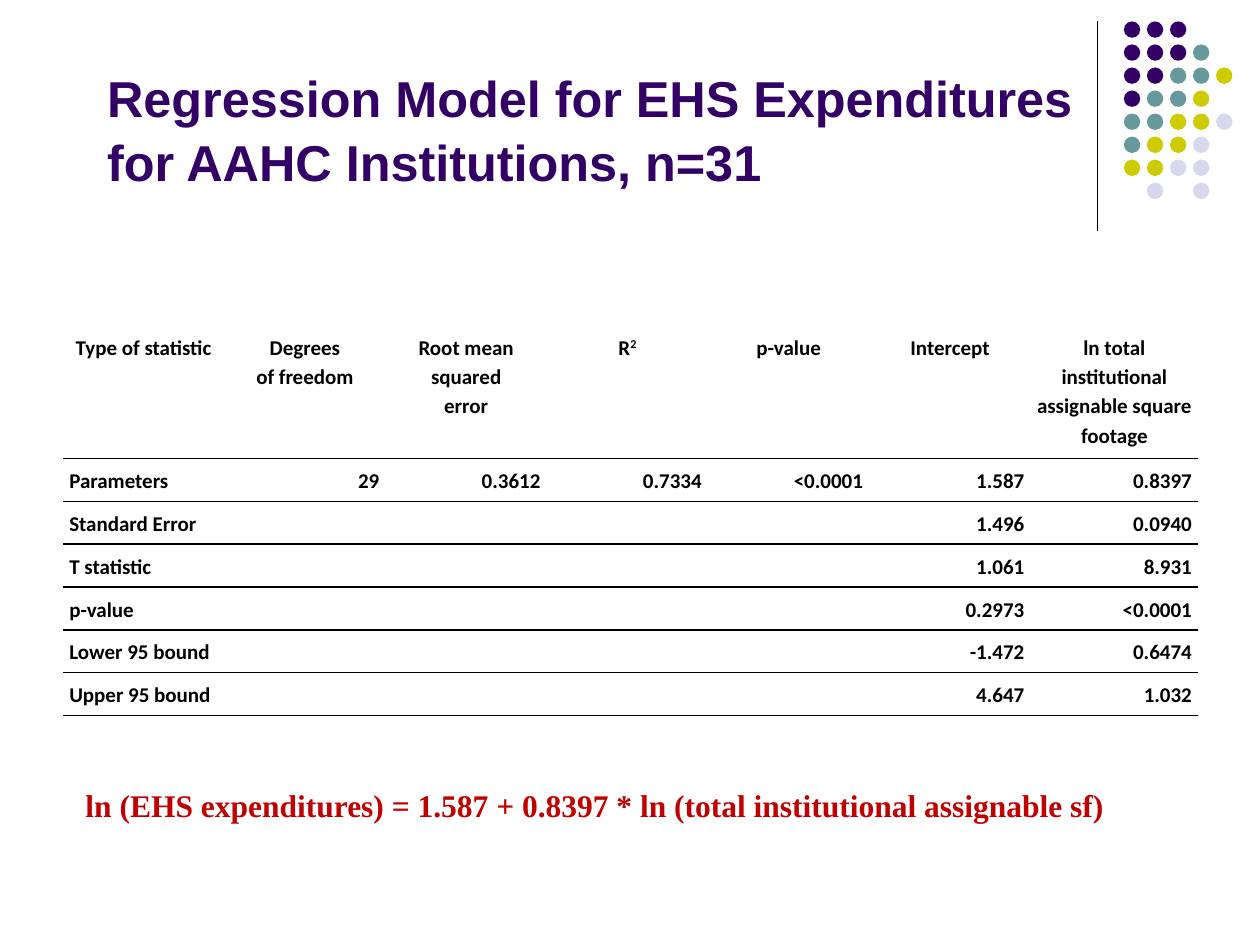
from lxml.etree import SubElement
from pptx import Presentation
from pptx.dml.color import RGBColor
from pptx.enum.shapes import MSO_CONNECTOR, MSO_SHAPE
from pptx.enum.text import MSO_ANCHOR, PP_ALIGN
from pptx.oxml import parse_xml
from pptx.oxml.ns import nsdecls, qn
from pptx.util import Inches, Pt

COLORS = {"text": "000000", "title": "330066", "equation": "C00000",
          "P": "330066", "T": "669999", "Y": "CCCC00", "L": "D8D8EC"}

FORMATS = {
    "title": {"name": "Arial", "size": Pt(28.8), "bold": True},
    "table": {"name": "Calibri", "size": Pt(12), "bold": True},
    "equation": {"name": "Times New Roman", "size": Pt(18), "bold": True},
}

# One letter per dot colour, a space for a gap
DOT_ROWS = ["PPP", "PPPT", "PPTTY", "PTTY", "TTYYL", "TYYL", "YYLL", " L L"]
DOT_PITCH = 1.28 / 7
DOT_SIZE = 0.13

HEADERS = ["Type of statistic", "Degrees\vof freedom",
           "Root mean squared\verror", "R", "p-value", "Intercept",
           "ln total institutional assignable square footage"]
STATISTICS = [
    ["Parameters", "29", "0.3612", "0.7334", "<0.0001", "1.587", "0.8397"],
    ["Standard Error", "", "", "", "", "1.496", "0.0940"],
    ["T statistic", "", "", "", "", "1.061", "8.931"],
    ["p-value", "", "", "", "", "0.2973", "<0.0001"],
    ["Lower 95 bound", "", "", "", "", "-1.472", "0.6474"],
    ["Upper 95 bound", "", "", "", "", "4.647", "1.032"],
]
COLUMN_WIDTHS = [1.28] * 6 + [1.33]
ROW_HEIGHTS = [1.06] + [0.34] * 6


def rgb(name):
    return RGBColor.from_string(COLORS[name])


def set_attributes(target, values):
    for name, value in values.items():
        setattr(target, name, value)


class SlideBuilder:
    def __init__(self, slide):
        self.slide = slide

    def format_run(self, run, style, color):
        set_attributes(run.font, FORMATS[style])
        run.font.color.rgb = rgb(color)

    def title(self, text, left, top, width, height):
        shape = self.slide.shapes.title
        set_attributes(shape, {"left": Inches(left), "top": Inches(top),
                               "width": Inches(width), "height": Inches(height)})
        frame = shape.text_frame
        set_attributes(frame, {"text": text, "word_wrap": True,
                               "vertical_anchor": MSO_ANCHOR.BOTTOM})
        paragraph = frame.paragraphs[0]
        set_attributes(paragraph, {"alignment": PP_ALIGN.LEFT, "line_spacing": 1.05})
        self.format_run(paragraph.runs[0], "title", "title")

    def text(self, text, left, top, width, height):
        shape = self.slide.shapes.add_textbox(
            Inches(left), Inches(top), Inches(width), Inches(height))
        set_attributes(shape.text_frame, {"text": text, "word_wrap": True})
        self.format_run(shape.text_frame.paragraphs[0].runs[0], "equation", "equation")

    def line(self, x, top, bottom):
        line = self.slide.shapes.add_connector(
            MSO_CONNECTOR.STRAIGHT, Inches(x), Inches(top), Inches(x), Inches(bottom))
        line.line.color.rgb = rgb("text")
        line.line.width = Pt(0.75)
        SubElement(line._element.spPr, qn("a:effectLst"))

    def dots(self, left, top):
        group = self.slide.shapes.add_group_shape()
        for row, letters in enumerate(DOT_ROWS):
            for column, letter in enumerate(letters):
                if letter == " ":
                    continue
                dot = group.shapes.add_shape(
                    MSO_SHAPE.OVAL,
                    Inches(left + column * DOT_PITCH), Inches(top + row * DOT_PITCH),
                    Inches(DOT_SIZE), Inches(DOT_SIZE))
                dot.shadow.inherit = False
                dot.fill.solid()
                dot.fill.fore_color.rgb = rgb(letter)
                dot.line.fill.background()

    def border(self, cell, sides):
        """Rule the named sides in black and leave the others bare."""
        properties = cell._tc.get_or_add_tcPr()
        for index, side in enumerate("LRTB"):
            if side in sides:
                fill = f'<a:solidFill><a:srgbClr val="{COLORS["text"]}"/></a:solidFill>'
            else:
                fill = "<a:noFill/>"
            properties.insert(index, parse_xml(
                f'<a:ln{side} {nsdecls("a")} w="{Pt(1)}">{fill}</a:ln{side}>'))

    def cell(self, cell, text, alignment, sides):
        margins = ("margin_left", "margin_right", "margin_top", "margin_bottom")
        set_attributes(cell, dict.fromkeys(margins, Inches(0.05)))
        cell.text_frame.text = text
        cell.fill.background()
        self.border(cell, sides)
        paragraph = cell.text_frame.paragraphs[0]
        set_attributes(paragraph, {"alignment": alignment, "line_spacing": 1.15})
        for run in paragraph.runs:
            self.format_run(run, "table", "text")
        # Line breaks and empty cells keep the table's text size
        size = str(FORMATS["table"]["size"].centipoints)
        for line_break in paragraph._p.findall(qn("a:br")):
            SubElement(line_break, qn("a:rPr"), sz=size)
        if not text:
            SubElement(paragraph._p, qn("a:endParaRPr"), sz=size)

    def superscript(self, cell, text):
        run = cell.text_frame.paragraphs[0].add_run()
        run.text = text
        self.format_run(run, "table", "text")
        run._r.get_or_add_rPr().set("baseline", "30000")

    def table(self, rows, left, top):
        table = self.slide.shapes.add_table(
            len(rows), len(rows[0]), Inches(left), Inches(top),
            Inches(sum(COLUMN_WIDTHS)), Inches(sum(ROW_HEIGHTS))).table
        set_attributes(table, {"first_row": False, "horz_banding": False})
        for column, width in zip(table.columns, COLUMN_WIDTHS):
            column.width = Inches(width)
        for row, height in zip(table.rows, ROW_HEIGHTS):
            row.height = Inches(height)
        for row, texts in enumerate(rows):
            for column, text in enumerate(texts):
                if row == 0:
                    alignment = PP_ALIGN.CENTER
                else:
                    alignment = PP_ALIGN.RIGHT if column else PP_ALIGN.LEFT
                self.cell(table.cell(row, column), text, alignment,
                          "TB" if row else "B")
        return table


def main():
    presentation = Presentation()
    presentation.slide_width = Inches(10)
    presentation.slide_height = Inches(7.5)
    title_only = presentation.slide_layouts[5]
    builder = SlideBuilder(presentation.slides.add_slide(title_only))

    # Corner decoration
    builder.line(8.71, 0.17, 1.83)
    builder.dots(8.92, 0.17)

    # Title
    builder.title("Regression Model for EHS Expenditures for AAHC Institutions, n=31",
                  0.75, 0.42, 8.48, 1.15)

    # Regression results
    table = builder.table([HEADERS] + STATISTICS, 0.5, 2.58)
    builder.superscript(table.cell(0, HEADERS.index("R")), "2")

    # Fitted equation
    builder.text("ln (EHS expenditures) = 1.587 + 0.8397 * "
                 "ln (total institutional assignable sf)", 0.58, 6.19, 8.92, 0.4)

    presentation.save("out.pptx")


if __name__ == "__main__":
    main()
